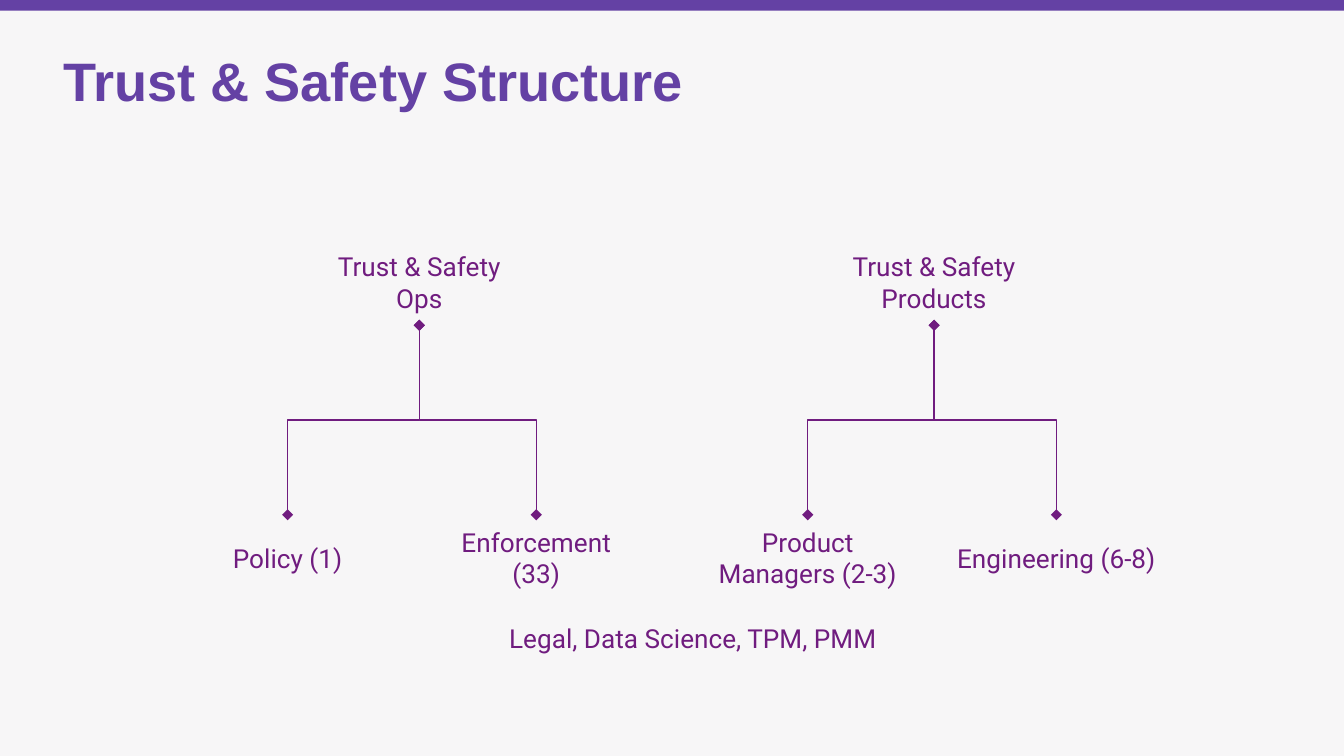
from dataclasses import dataclass

from lxml.etree import SubElement
from pptx import Presentation
from pptx.dml.color import RGBColor
from pptx.enum.shapes import MSO_CONNECTOR, MSO_SHAPE
from pptx.enum.text import MSO_ANCHOR, PP_ALIGN
from pptx.oxml.ns import qn
from pptx.slide import Slide
from pptx.util import Inches, Pt

COLORS = {"background": "F7F6F7", "brand": "6441A4", "chart": "701C7F"}

# The grid has 100 columns across the slide; rows have the same pitch.
UNIT = Inches(0.1)
NODE_WIDTH, NODE_HEIGHT = 16.8, 6.4
TEAM_ROW, ROLE_ROW = 17.8, 38.3

# Team name and column, then its roles with their columns
TEAMS = [
    ("Trust & Safety Ops", 22.8,
     [("Policy (1)", 13), ("Enforcement (33)", 31.5)]),
    ("Trust & Safety Products", 61.1,
     [("Product Managers (2-3)", 51.7), ("Engineering (6-8)", 70.2)]),
]


def grid(*cells):
    return [round(cell * UNIT) for cell in cells]


def color(name):
    return RGBColor.from_string(COLORS[name])


@dataclass
class OrgSlide:
    slide: Slide
    font: str = "Roboto"
    size: float = 14
    line_width: float = 0.75

    def background(self):
        fill = self.slide.background.fill
        fill.solid()
        fill.fore_color.rgb = color("background")

    def band(self, left, top, width, height):
        band = self.slide.shapes.add_shape(
            MSO_SHAPE.RECTANGLE, *grid(left, top, width, height))
        band.shadow.inherit = False
        band.fill.solid()
        band.fill.fore_color.rgb = color("brand")
        band.line.fill.background()

    def text(self, words, left, top, width, height, inset=(1, 0.5)):
        """Add a text box in the base style and return its frame."""
        frame = self.slide.shapes.add_textbox(
            *grid(left, top, width, height)).text_frame
        frame.word_wrap = True
        frame.margin_left = frame.margin_right = grid(inset[0])[0]
        frame.margin_top = frame.margin_bottom = grid(inset[1])[0]
        frame.text = words
        font = frame.paragraphs[0].runs[0].font
        font.name, font.size = self.font, Pt(self.size)
        font.color.rgb = color("chart")
        return frame

    def title(self, words, left, top, width, height):
        frame = self.text(words, left, top, width, height, inset=(0.7, 0.7))
        paragraph = frame.paragraphs[0]
        paragraph.line_spacing = 0.9
        paragraph.space_before = Pt(8)
        font = paragraph.runs[0].font
        font.name, font.size, font.bold = "Arial", Pt(29), True
        font.color.rgb = color("brand")

    def node(self, words, left, top):
        frame = self.text(words, left, top, NODE_WIDTH, NODE_HEIGHT, inset=(1, 1))
        frame.vertical_anchor = MSO_ANCHOR.MIDDLE
        frame.paragraphs[0].alignment = PP_ALIGN.CENTER

    def branch(self, team_left, role_left):
        """Join the bottom of a team to the top of a role, leaving vertically.

        An elbow leaves sideways, so it is laid flat and turned a quarter.
        """
        start_row = TEAM_ROW + NODE_HEIGHT
        drop, shift = ROLE_ROW - start_row, role_left - team_left
        center_x = (team_left + role_left + NODE_WIDTH) / 2
        center_y = start_row + drop / 2
        to_right = shift > 0
        half = drop / 2 if to_right else -drop / 2
        rise = abs(shift) / 2
        elbow = self.slide.shapes.add_connector(
            MSO_CONNECTOR.ELBOW,
            *grid(center_x + half, center_y - rise,
                  center_x - half, center_y + rise))
        elbow.line.width = Pt(self.line_width)
        elbow.line.color.rgb = color("chart")
        properties = elbow._element.spPr
        properties.find(qn("a:xfrm")).set(
            "rot", str((270 if to_right else 90) * 60000))
        outline = properties.find(qn("a:ln"))
        for end in ("a:headEnd", "a:tailEnd"):
            SubElement(outline, qn(end), type="diamond", w="med", len="med")
        SubElement(properties, qn("a:effectLst"))


def main():
    deck = Presentation()
    deck.slide_width, deck.slide_height = grid(100, 56.25)
    org = OrgSlide(deck.slides.add_slide(deck.slide_layouts[6]))

    org.background()
    org.band(0, 0, 100, 0.8)
    org.title("Trust & Safety Structure", 4, 3.4, 90.8, 5.4)

    for team, team_left, roles in TEAMS:
        for role, role_left in roles:
            org.branch(team_left, role_left)
            org.node(role, role_left, ROLE_ROW)
        org.node(team, team_left, TEAM_ROW)

    org.text("Legal, Data Science, TPM, PMM", 36.9, 45.8, 47.6, 5.7)
    deck.save("out.pptx")


if __name__ == "__main__":
    main()
